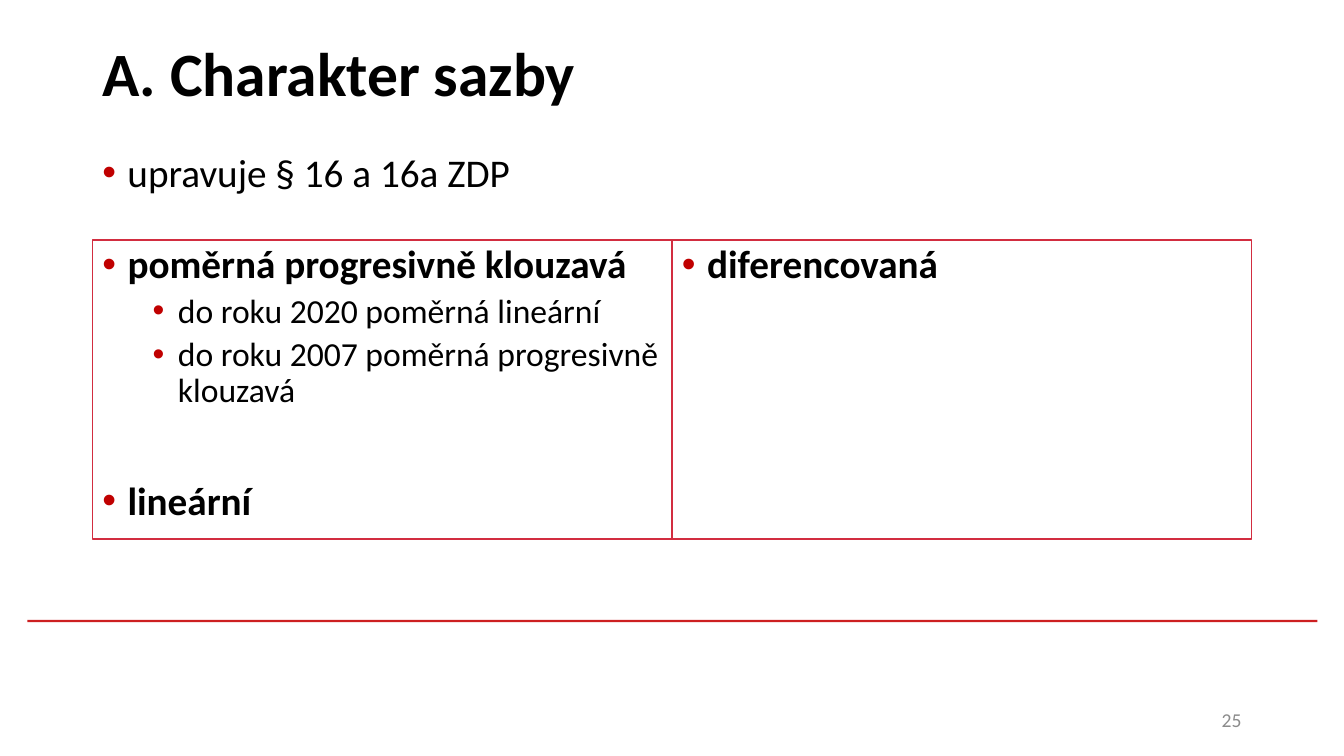
from lxml import etree
from pptx import Presentation
from pptx import util as u
from pptx.dml.color import RGBColor
from pptx.enum import shapes, text
from pptx.oxml.ns import qn

Pt = u.Pt


def color(value):
    return RGBColor.from_string(value)


def write(shape, paragraphs, anchor=text.MSO_ANCHOR.TOP):
    frame = shape.text_frame
    frame.word_wrap = True
    frame.vertical_anchor = anchor
    for index, (words, style, space) in enumerate(paragraphs):
        paragraph = frame.paragraphs[0] if index == 0 else frame.add_paragraph()
        paragraph.text = words
        paragraph.line_spacing = 0.9
        paragraph.space_before = Pt(space)
        paragraph.alignment = style["align"]
        if "indent" in style:
            properties = paragraph._p.get_or_add_pPr()
            properties.set("marL", str(Pt(style["indent"])))
            properties.set("indent", str(Pt(-18)))
            bullet_color = etree.SubElement(properties, qn("a:buClr"))
            etree.SubElement(bullet_color, qn("a:srgbClr"), val="C00000")
            etree.SubElement(properties, qn("a:buFont"), typeface="Arial")
            etree.SubElement(properties, qn("a:buChar"), char="•")
            paragraph.level = style["level"]
        font = paragraph.runs[0].font
        for name, value in style["font"].items():
            setattr(font, name, value)
        font.color.rgb = color(style["color"])


left_align, right_align = text.PP_ALIGN.LEFT, text.PP_ALIGN.RIGHT
title_style = {"font": {"name": "Calibri", "size": Pt(44), "bold": True},
               "color": "000000", "align": left_align}
number_style = {"font": {"name": "Calibri", "size": Pt(14), "bold": False},
                "color": "8C8C8C", "align": right_align}
item_style = {"font": {"name": "Calibri", "size": Pt(28), "bold": False},
              "color": "000000", "align": left_align, "indent": 18, "level": 0}
heading_style = {**item_style, "font": {**item_style["font"], "bold": True}}
detail_style = {**item_style, "font": {**item_style["font"], "size": Pt(24)},
                "indent": 54, "level": 1}

presentation = Presentation()
presentation.slide_width = Pt(960)
presentation.slide_height = Pt(540)
slide = presentation.slides.add_slide(presentation.slide_layouts[6])

rule = slide.shapes.add_shape(shapes.MSO_SHAPE.RECTANGLE, Pt(19.5), Pt(442.8), Pt(921.6), Pt(1.6))
rule.shadow.inherit = False
rule.fill.solid()
rule.fill.fore_color.rgb = color("CD1F21")
rule.line.fill.background()

middle = text.MSO_ANCHOR.MIDDLE
text_boxes = [
    (66, 1.4, 828, 106, [("A. Charakter sazby", title_style, 0)], middle),
    (66, 106, 828, 65, [("upravuje § 16 a 16a ZDP", item_style, 0)], text.MSO_ANCHOR.TOP),
    (678, 500.5, 216, 28.8, [("25", number_style, 0)], middle),
]
for left, top, width, height, paragraphs, anchor in text_boxes:
    box = slide.shapes.add_textbox(Pt(left), Pt(top), Pt(width), Pt(height))
    write(box, paragraphs, anchor)

columns = [
    [("poměrná progresivně klouzavá", heading_style, 0),
     ("do roku 2020 poměrná lineární", detail_style, 5),
     ("do roku 2007 poměrná progresivně klouzavá", detail_style, 5),
     ("lineární", heading_style, 51)],
    [("diferencovaná", heading_style, 0)],
]
column_width = 414
for index, paragraphs in enumerate(columns):
    column = slide.shapes.add_shape(
        shapes.MSO_SHAPE.RECTANGLE,
        Pt(66 + index * column_width), Pt(171.4), Pt(column_width), Pt(213.6))
    column.shadow.inherit = False
    column.fill.solid()
    column.fill.fore_color.rgb = color("FFFFFF")
    column.line.color.rgb = color("D22D40")
    column.line.width = Pt(1)
    write(column, paragraphs)

presentation.save("out.pptx")
